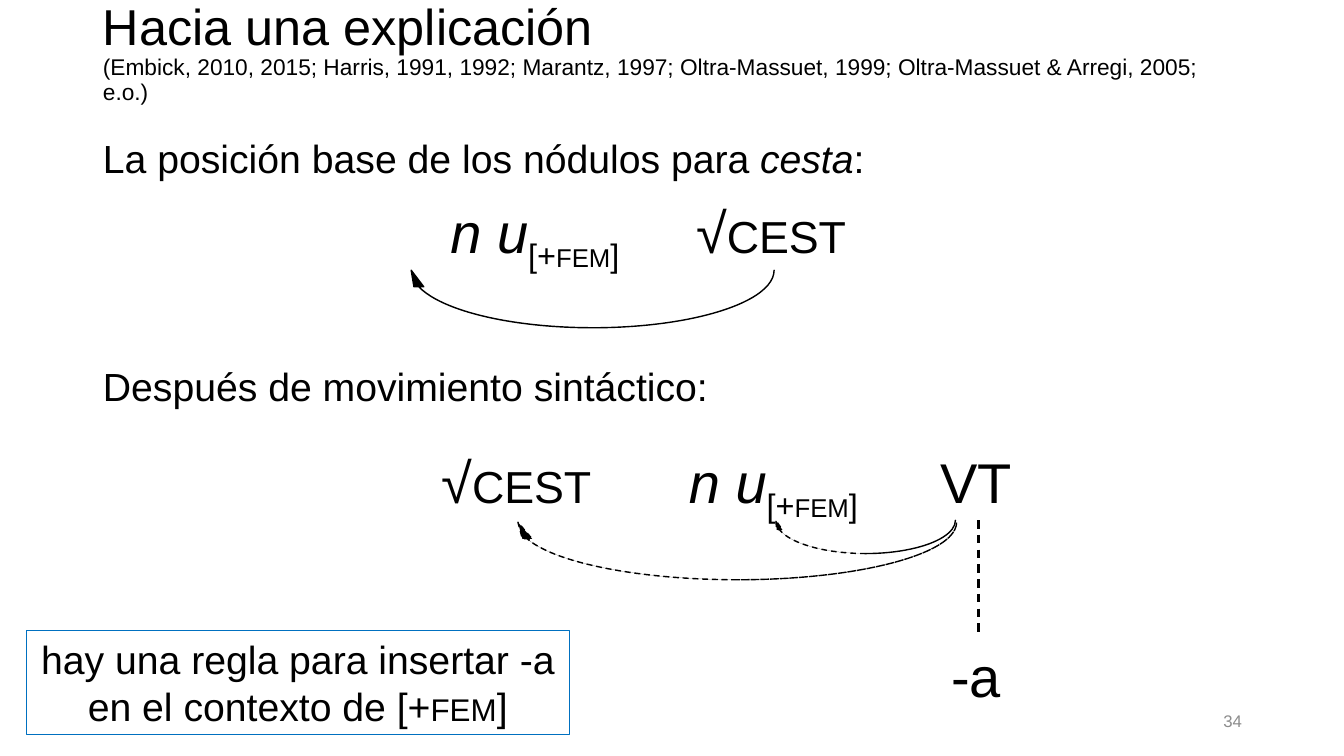
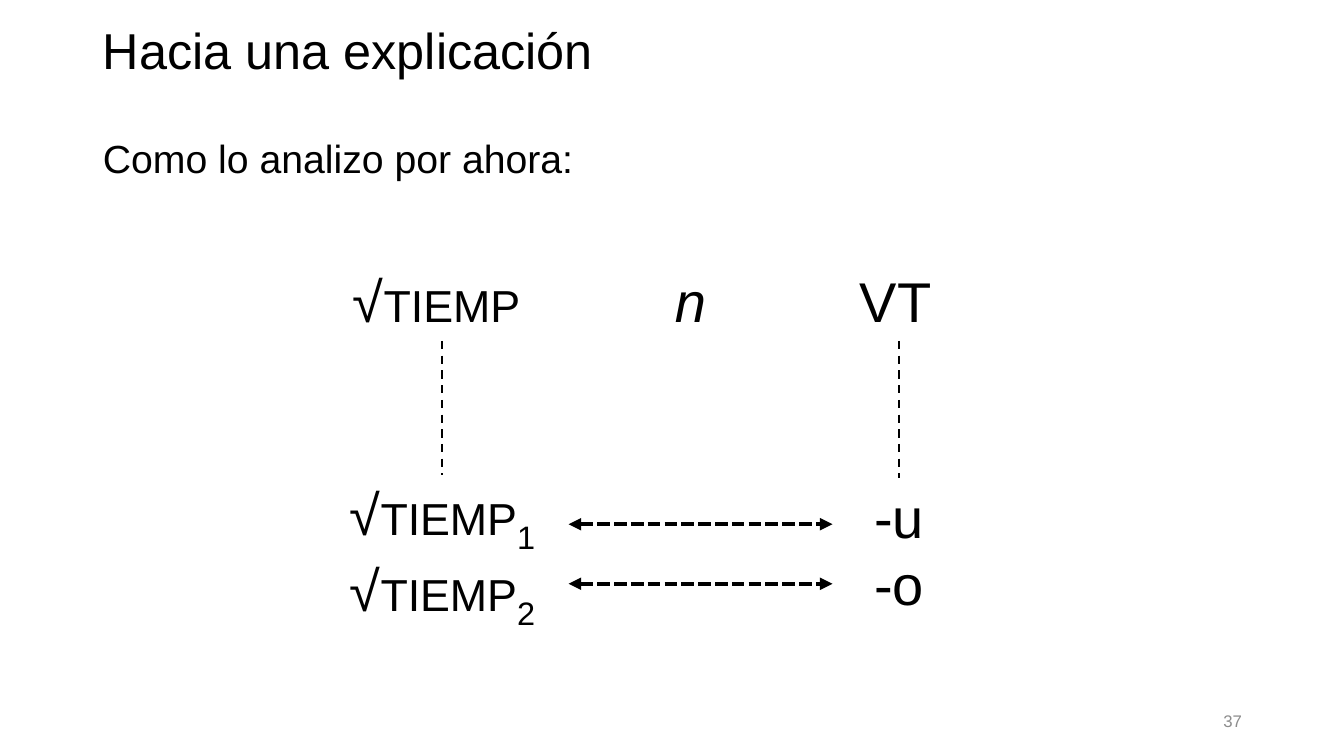
from dataclasses import dataclass

from lxml import etree
from pptx import Presentation
from pptx.dml.color import RGBColor
from pptx.enum.dml import MSO_LINE
from pptx.enum.shapes import MSO_CONNECTOR, MSO_SHAPE
from pptx.enum.text import MSO_ANCHOR, MSO_AUTO_SIZE, PP_ALIGN
from pptx.oxml.ns import qn
from pptx.util import Cm, Pt

BLACK = RGBColor(0x00, 0x00, 0x00)
BLUE = RGBColor(0x00, 0x70, 0xC0)
GRAY = RGBColor(0x8C, 0x8C, 0x8C)

LEFT, CENTER, RIGHT = PP_ALIGN.LEFT, PP_ALIGN.CENTER, PP_ALIGN.RIGHT
TOP, MIDDLE = MSO_ANCHOR.TOP, MSO_ANCHOR.MIDDLE
NO_AUTOFIT = MSO_AUTO_SIZE.NONE
DASH, SHORT_DASH = MSO_LINE.DASH, MSO_LINE.SQUARE_DOT
STRAIGHT = MSO_CONNECTOR.STRAIGHT
RECTANGLE, CURVED_ARROW = MSO_SHAPE.RECTANGLE, MSO_SHAPE.CURVED_UP_ARROW

FONT = "Arial"
TITLE_SIZE, BODY_SIZE, LABEL_SIZE = 36, 28, 40
WIDE, MEDIUM, NARROW = 7.24, 5.8, 3.38


@dataclass
class Piece:
    """A stretch of text in one style."""
    text: str
    italic: bool = False
    small_caps: bool = False
    subscript: bool = False


def root(name, index=""):
    pieces = [Piece("√"), Piece(name, small_caps=True)]
    if index:
        pieces.append(Piece(index, subscript=True))
    return pieces


def feminine_noun():
    return [
        Piece("n u", italic=True),
        Piece("[+", subscript=True),
        Piece("fem", small_caps=True, subscript=True),
        Piece("]", subscript=True),
    ]


class Deck:
    def __init__(self):
        self.presentation = Presentation()
        self.presentation.slide_width = Cm(33.87)
        self.presentation.slide_height = Cm(19.05)
        self.layout = self.presentation.slide_layouts[1]
        self.slide = None

    def start_slide(self, number):
        self.slide = self.presentation.slides.add_slide(self.layout)
        box = self.slide.shapes.add_textbox(Cm(23.93), Cm(17.65), Cm(7.62), Cm(1.02))
        paragraph = self.prepare(box, RIGHT, MIDDLE).paragraphs[0]
        self.add_runs(paragraph, [Piece(number)], 12, GRAY)

    def prepare(self, shape, alignment, anchor=TOP):
        frame = shape.text_frame
        frame.word_wrap = True
        frame.auto_size = NO_AUTOFIT
        frame.vertical_anchor = anchor
        frame.paragraphs[0].alignment = alignment
        return frame

    def add_runs(self, paragraph, pieces, size, color=BLACK):
        for piece in pieces:
            run = paragraph.add_run()
            run.text = piece.text
            run.font.name = FONT
            run.font.size = Pt(size)
            run.font.color.rgb = color
            run.font.italic = piece.italic
            properties = run._r.get_or_add_rPr()
            if piece.small_caps:
                properties.set("cap", "small")
            if piece.subscript:
                properties.set("baseline", "-25000")

    def place(self, shape, left, top, width, height):
        shape.left, shape.top = Cm(left), Cm(top)
        shape.width, shape.height = Cm(width), Cm(height)

    def title(self, text, citation=""):
        shape = self.slide.shapes.title
        self.place(shape, 2.34, 0.46, 29.21, 1.78)
        paragraph = self.prepare(shape, LEFT, MIDDLE).paragraphs[0]
        paragraph.line_spacing = 0.9
        self.add_runs(paragraph, [Piece(text)], TITLE_SIZE)
        if citation:
            paragraph.add_line_break()
            line_break = paragraph._p.findall(qn("a:br"))[-1]
            etree.SubElement(line_break, qn("a:rPr"), sz=str(TITLE_SIZE * 100))
            self.add_runs(paragraph, [Piece(citation)], 16.2)

    def body(self, paragraphs, gap=0):
        """Fill the body, with gap points between paragraphs."""
        shape = self.slide.placeholders[1]
        self.place(shape, 2.34, 3.4, 29.21, 14.02)
        frame = self.prepare(shape, LEFT)
        for index, pieces in enumerate(paragraphs):
            paragraph = frame.add_paragraph() if index else frame.paragraphs[0]
            properties = paragraph._p.get_or_add_pPr()
            properties.set("marL", "0")
            properties.set("indent", "0")
            etree.SubElement(properties, qn("a:buNone"))
            paragraph.alignment = LEFT
            paragraph.line_spacing = 0.9
            paragraph.space_before = Pt(gap if index else 0)
            self.add_runs(paragraph, pieces, BODY_SIZE)

    def label(self, center, top, width, *lines):
        """Put large lines of text around a vertical axis."""
        box = self.slide.shapes.add_textbox(
            Cm(center - width / 2), Cm(top), Cm(width), Cm(0.25 + 1.71 * len(lines)))
        frame = self.prepare(box, CENTER)
        for index, pieces in enumerate(lines):
            paragraph = frame.add_paragraph() if index else frame.paragraphs[0]
            paragraph.alignment = CENTER
            self.add_runs(paragraph, pieces, LABEL_SIZE)

    def shape(self, kind, left, top, width, height, color, weight):
        shape = self.slide.shapes.add_shape(kind, Cm(left), Cm(top), Cm(width), Cm(height))
        shape.shadow.inherit = False
        shape.line.color.rgb = color
        shape.line.width = Pt(weight)
        return shape

    def framed_text(self, left, top, width, height, pieces):
        shape = self.shape(RECTANGLE, left, top, width, height, BLUE, 0.75)
        shape.fill.background()
        self.add_runs(self.prepare(shape, CENTER).paragraphs[0], pieces, BODY_SIZE)

    def movement_arrow(self, left, top, width, height, dash=None):
        """Draw a curved arrow that runs from right to left."""
        shape = self.shape(CURVED_ARROW, left, top, width, height, BLACK, 1)
        shape.fill.solid()
        shape.fill.fore_color.rgb = BLACK
        shape.line.dash_style = dash
        for index, value in enumerate((0, 0.17, 0.288)):
            shape.adjustments[index] = value
        shape._element.spPr.find(qn("a:xfrm")).set("flipH", "1")

    def dashed_line(self, start, end, weight=1.5, dash=DASH, arrows=False):
        line = self.slide.shapes.add_connector(
            STRAIGHT, *(Cm(value) for value in (*start, *end)))
        line.line.color.rgb = BLACK
        line.line.width = Pt(weight)
        line.line.dash_style = dash
        properties = line._element.spPr
        if arrows:
            for tag in ("a:headEnd", "a:tailEnd"):
                etree.SubElement(properties.find(qn("a:ln")), qn(tag), type="triangle")
        etree.SubElement(properties, qn("a:effectLst"))


def movement_slide(deck):
    deck.start_slide("34")
    deck.title(
        "Hacia una explicación",
        "(Embick, 2010, 2015; Harris, 1991, 1992; Marantz, 1997; "
        "Oltra-Massuet, 1999; Oltra-Massuet & Arregi, 2005; e.o.)")
    deck.body([
        [Piece("La posición base de los nódulos para "),
         Piece("cesta", italic=True), Piece(":")],
        [Piece("Después de movimiento sintáctico:")],
    ], gap=132)

    base_row, moved_row, ending_row = 4.85, 11.15, 16.03
    theme_axis = 24.6
    deck.label(19.43, base_row, WIDE, root("cest"))
    deck.label(13.48, base_row, MEDIUM, feminine_noun())
    deck.movement_arrow(10.24, 6.81, 9.27, 1.45)

    deck.label(13.01, moved_row, WIDE, root("cest"))
    deck.label(19.49, moved_row, MEDIUM, feminine_noun())
    deck.label(theme_axis, moved_row, NARROW, [Piece("VT")])
    deck.label(theme_axis, ending_row, NARROW, [Piece("-a")])
    deck.movement_arrow(12.93, 13.16, 11.18, 1.45, DASH)
    deck.movement_arrow(19.48, 13.11, 4.6, 0.84, DASH)
    deck.dashed_line((24.66, 13.11), (24.66, ending_row))
    deck.framed_text(0.66, 15.88, 13.69, 2.64, [
        Piece("hay una regla para insertar -a en el contexto de [+"),
        Piece("fem", small_caps=True), Piece("]")])


def analysis_slide(deck):
    deck.start_slide("37")
    deck.title("Hacia una explicación")
    deck.body([[Piece("Como lo analizo por ahora:")]])

    node_row, line_top = 6.6, 8.59
    root_axis, theme_axis = 11.15, 22.66
    deck.label(11, node_row, WIDE, root("tiemp"))
    deck.label(17.4, node_row, NARROW, [Piece("n", italic=True)])
    deck.label(22.57, node_row, NARROW, [Piece("VT")])
    deck.label(root_axis, 11.96, MEDIUM, root("tiemp", "1"), root("tiemp", "2"))
    deck.label(theme_axis, 12.04, NARROW, [Piece("-u")], [Piece("-o")])
    deck.dashed_line((root_axis, line_top), (root_axis, 11.96))
    deck.dashed_line((theme_axis, line_top), (theme_axis, 12.04))
    for height in (13.21, 14.71):
        deck.dashed_line((14.33, height), (20.98, height), 3, SHORT_DASH, arrows=True)


def main():
    deck = Deck()
    movement_slide(deck)
    analysis_slide(deck)
    deck.presentation.save("out.pptx")


if __name__ == "__main__":
    main()
